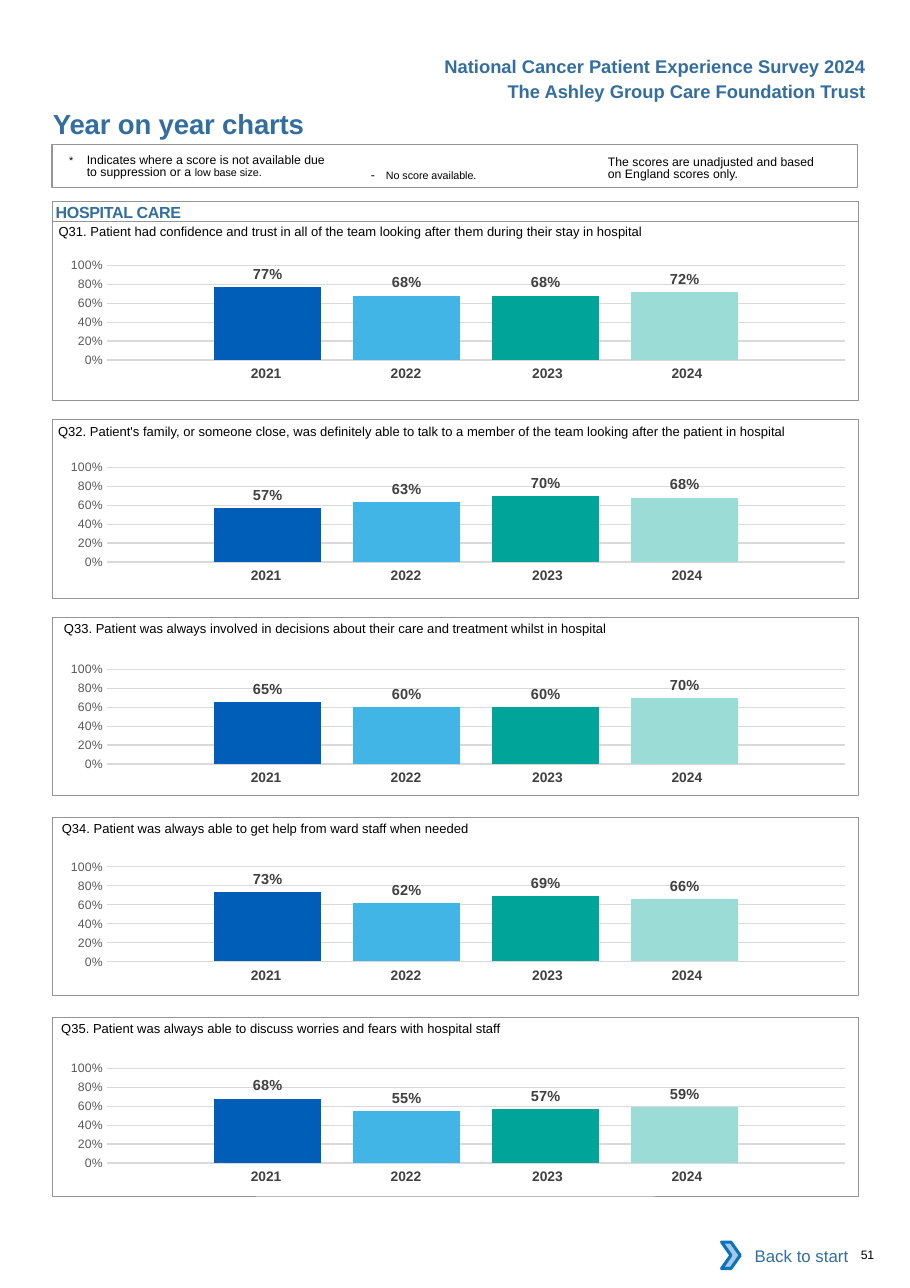
from lxml import etree
from pptx import Presentation
from pptx.chart.data import CategoryChartData
from pptx.dml.color import RGBColor
from pptx.enum.chart import XL_CHART_TYPE, XL_LABEL_POSITION as LABEL_POS, XL_TICK_MARK as TICK
from pptx.enum.shapes import MSO_SHAPE as SHAPE
from pptx.enum.text import MSO_ANCHOR as ANCHOR, PP_ALIGN as ALIGN
from pptx.oxml import parse_xml
from pptx.oxml.ns import nsdecls, qn
from pptx.util import Pt

COLORS = {
    "heading": "336E9F", "text": "000000", "border": "939598", "white": "FFFFFF",
    "year": "414042", "label": "404040", "axis": "595959", "grid": "D9D9D9",
    "arrow": "A8C7E9", "arrow_line": "0A74BB",
    "2021": "005EB8", "2022": "41B6E6", "2023": "00A499", "2024": "9CDCD7",
}
YEARS = ["2021", "2022", "2023", "2024"]
YEAR_COLUMNS = [(91.4, 0), (91.4, 0), (96.5, 2.9), (91.4, 8.6)]  # width, right margin
PANEL_LEFT, PANEL_WIDTH, PANEL_HEIGHT = 34.4, 526.7, 116.6
NO_STYLE = "{2D5ABB26-0587-4C30-8999-92F81FD0307C}"

# Question, its left and top, panel top, chart top, scores by year
QUESTIONS = [
    ("Q31. Patient had confidence and trust in all of the team looking after them "
     "during their stay in hospital", 38.3, 146.2, 144.9, 160, (0.77, 0.68, 0.68, 0.72)),
    ("Q32. Patient's family, or someone close, was definitely able to talk to a member "
     "of the team looking after the patient in hospital",
     38, 277, 274.3, 292, (0.57, 0.63, 0.70, 0.68)),
    ("Q33. Patient was always involved in decisions about their care and treatment "
     "whilst in hospital", 41.8, 405.5, 403.2, 424, (0.65, 0.60, 0.60, 0.70)),
    ("Q34. Patient was always able to get help from ward staff when needed",
     40.4, 536.4, 534.2, 553, (0.73, 0.62, 0.69, 0.66)),
    ("Q35. Patient was always able to discuss worries and fears with hospital staff",
     40, 667, 665, 684.7, (0.68, 0.55, 0.57, 0.59)),
]


def rgb(name):
    return RGBColor.from_string(COLORS[name])


def style_font(font, size, color, bold=False, name="Arial"):
    font.name, font.size, font.bold = name, Pt(size), bold
    font.color.rgb = rgb(color)


def add_run(p, text, size, color="text", bold=False, spacing=0):
    """Spacing is the letter spacing in points."""
    r = p.add_run()
    r.text = text
    style_font(r.font, size, color, bold)
    if spacing:
        r._r.get_or_add_rPr().set("spc", str(round(spacing * 100)))


def set_margins(box, left=0, top=0, right=0, bottom=0):
    box.margin_left, box.margin_top = Pt(left), Pt(top)
    box.margin_right, box.margin_bottom = Pt(right), Pt(bottom)


def add_text(slide, left, top, width, height, runs, align=ALIGN.LEFT, hanging=0, line=None):
    """Each run is (text, size, color, bold, spacing), the last three optional."""
    tf = slide.shapes.add_textbox(Pt(left), Pt(top), Pt(width), Pt(height)).text_frame
    tf.word_wrap = True
    set_margins(tf)
    p = tf.paragraphs[0]
    p.alignment = align
    if line:
        p.line_spacing = Pt(line)
    if hanging:
        pPr = p._p.get_or_add_pPr()
        pPr.set("marL", str(Pt(hanging)))
        pPr.set("indent", str(-Pt(hanging)))
    for run in runs:
        add_run(p, *run)


def add_box(slide, left, top, width, height, kind=SHAPE.RECTANGLE,
            fill=None, line="border", weight=0.5):
    sp = slide.shapes.add_shape(kind, Pt(left), Pt(top), Pt(width), Pt(height))
    sp.shadow.inherit = False
    if fill:
        sp.fill.solid()
        sp.fill.fore_color.rgb = rgb(fill)
    else:
        sp.fill.background()
    if line:
        sp.line.color.rgb = rgb(line)
        sp.line.width = Pt(weight)
    else:
        sp.line.fill.background()
    return sp


def write_in_box(sp, text, size, align, bold=False, spacing=0):
    tf = sp.text_frame
    tf.vertical_anchor = ANCHOR.MIDDLE
    p = tf.paragraphs[0]
    p.alignment = align
    add_run(p, text, size, "heading", bold, spacing)


def fix_plot_area(chart, x, y, w, h):
    """Set the inner plot area as fractions of the chart."""
    plot_area = chart._chartSpace.chart.plotArea
    for old in plot_area.findall(qn("c:layout")):
        plot_area.remove(old)
    layout = parse_xml(f"<c:layout {nsdecls('c')}><c:manualLayout/></c:layout>")
    settings = [("layoutTarget", "inner"), ("xMode", "edge"), ("yMode", "edge"),
                ("x", x), ("y", y), ("w", w), ("h", h)]
    for tag, value in settings:
        etree.SubElement(layout[0], qn(f"c:{tag}")).set("val", str(value))
    plot_area.insert(0, layout)


def add_score_chart(slide, top, scores):
    data = CategoryChartData(number_format="0%")
    data.categories = ["1"]
    for year, score in zip(YEARS, scores):
        data.add_series(year, [score])
    chart = slide.shapes.add_chart(XL_CHART_TYPE.COLUMN_CLUSTERED, Pt(28.1), Pt(top),
                                   Pt(527), Pt(92.9), data).chart
    chart.has_legend = chart.has_title = False
    style_font(chart.font, 10, "text", name="Calibri")
    chart.category_axis.visible = False

    axis = chart.value_axis
    axis.minimum_scale, axis.maximum_scale, axis.major_unit = 0, 1, 0.2
    axis.major_tick_mark = axis.minor_tick_mark = TICK.NONE
    axis.format.line.fill.background()
    axis.major_gridlines.format.line.color.rgb = rgb("grid")
    axis.major_gridlines.format.line.width = Pt(0.75)
    axis.tick_labels.number_format = "0%"
    axis.tick_labels.number_format_is_linked = False
    style_font(axis.tick_labels.font, 8, "axis")

    plot = chart.plots[0]
    plot.gap_width, plot.overlap, plot.vary_by_categories = 200, -30, False
    for year, series in zip(YEARS, plot.series):
        series.format.fill.solid()
        series.format.fill.fore_color.rgb = rgb(year)
        labels = series.data_labels
        labels.show_value = True
        labels.position = LABEL_POS.OUTSIDE_END
        labels.number_format, labels.number_format_is_linked = "0%", False
        style_font(labels.font, 9.5, "label", True)
    fix_plot_area(chart, 0.08, 0.145, 0.915, 0.666)


def add_year_table(slide, top):
    width = sum(w for w, _ in YEAR_COLUMNS)
    table = slide.shapes.add_table(1, len(YEARS), Pt(124.6), Pt(top), Pt(width), Pt(19.4)).table
    table.first_row = table.horz_banding = False
    table._tbl.tblPr.find(qn("a:tableStyleId")).text = NO_STYLE
    for i, (year, (column_width, right)) in enumerate(zip(YEARS, YEAR_COLUMNS)):
        table.columns[i].width = Pt(column_width)
        cell = table.cell(0, i)
        cell.fill.background()
        set_margins(cell, 7.2, 3.6, right, 3.6)
        p = cell.text_frame.paragraphs[0]
        p.alignment = ALIGN.CENTER
        add_run(p, year, 9, "year", True)


def add_question(slide, question, left, text_top, panel_top, chart_top, scores):
    add_year_table(slide, chart_top + 75.8)
    add_score_chart(slide, chart_top, scores)
    add_box(slide, PANEL_LEFT, panel_top, PANEL_WIDTH, PANEL_HEIGHT)
    add_text(slide, left, text_top, 515, 10, [(question, 8.5)])


def add_header(slide):
    titles = ["National Cancer Patient Experience Survey 2024",
              "The Ashley Group Care Foundation Trust"]
    for i, title in enumerate(titles):
        add_text(slide, 265, 36.1 + 16.2 * i, 300.9, 14,
                 [(title, 12, "heading", True)], ALIGN.RIGHT)
    add_text(slide, 34.6, 69.6, 324, 21, [("Year on year charts", 18, "heading", True, -0.1)])


def add_notes_box(slide):
    add_box(slide, 34, 94.3, PANEL_WIDTH, 28.1, weight=0.75)
    add_text(slide, 45.2, 100.8, 171, 17, [
        ("*\t", 7), ("Indicates where a score is not available due to suppression or a ", 8),
        ("low base size.", 7)], hanging=11.5, line=8.1)
    add_text(slide, 242.4, 109.1, 120, 9, [("-\t", 8), ("No score available.", 7)], hanging=9.8)
    add_text(slide, 397.3, 102.2, 142, 17, [
        ("The scores are unadjusted and based on England scores only.", 8)], line=8.1)


def add_footer(slide):
    button = add_box(slide, 476.6, 805.2, 85, 30.2, fill="white", line=None)
    write_in_box(button, "Back to start", 11, ALIGN.RIGHT)
    add_box(slide, 471.6, 811.7, 12.2, 17.3, SHAPE.CHEVRON, "arrow", "arrow_line", 2)
    add_text(slide, 562.6, 815.2, 28, 10, [("51", 8, "text", False, -0.2)])


def main():
    prs = Presentation()
    prs.slide_width, prs.slide_height = Pt(594.72), Pt(841.68)
    slide = prs.slides.add_slide(prs.slide_layouts[6])
    add_header(slide)
    add_notes_box(slide)
    section = add_box(slide, PANEL_LEFT, 131.9, PANEL_WIDTH, 13)
    set_margins(section.text_frame, left=2)
    write_in_box(section, "HOSPITAL CARE", 10.5, ALIGN.LEFT, True, -0.2)
    for question in QUESTIONS:
        add_question(slide, *question)
    add_footer(slide)
    prs.save("out.pptx")


if __name__ == "__main__":
    main()
